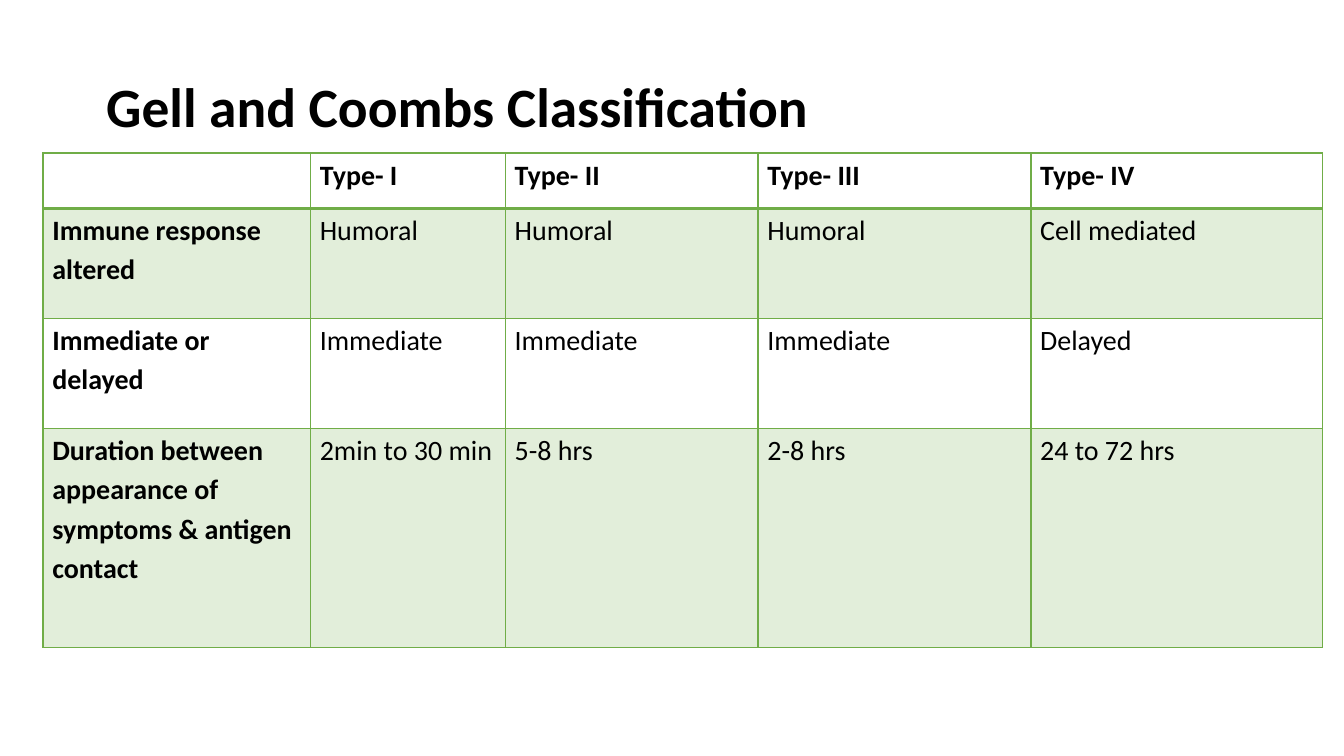
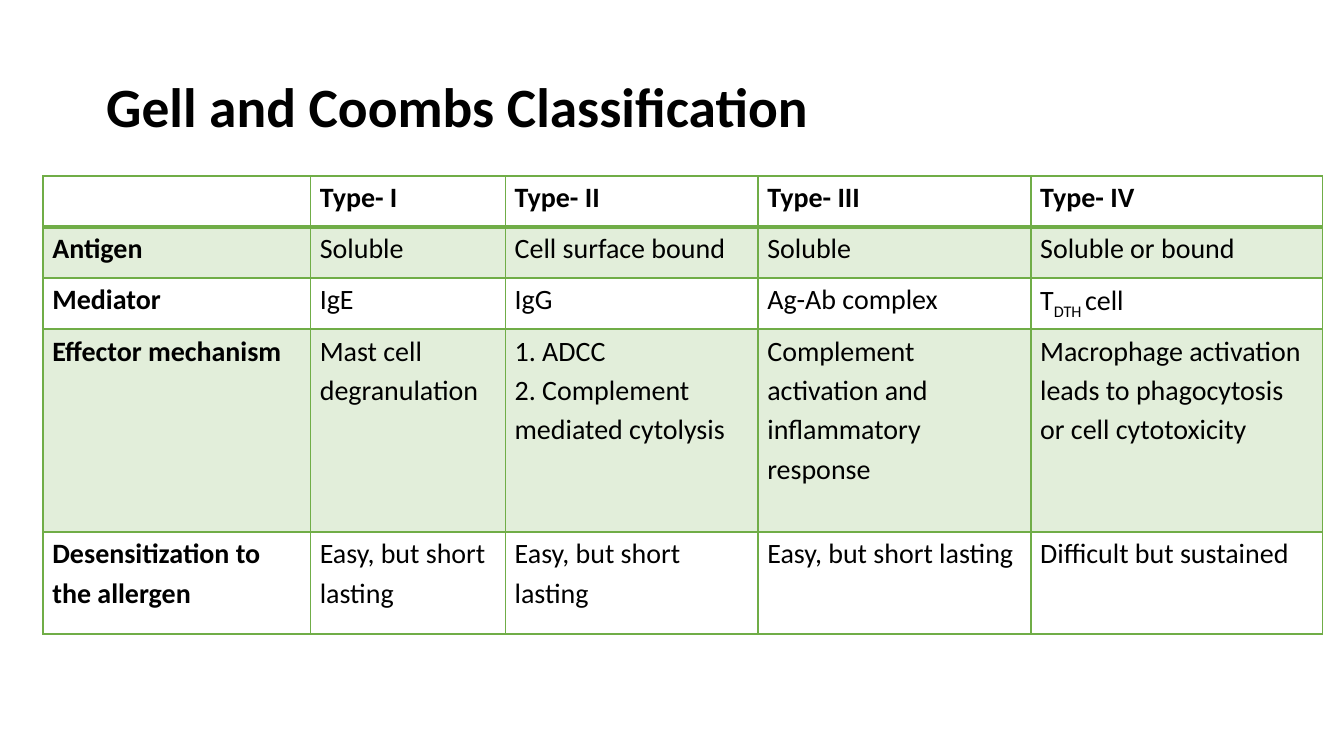
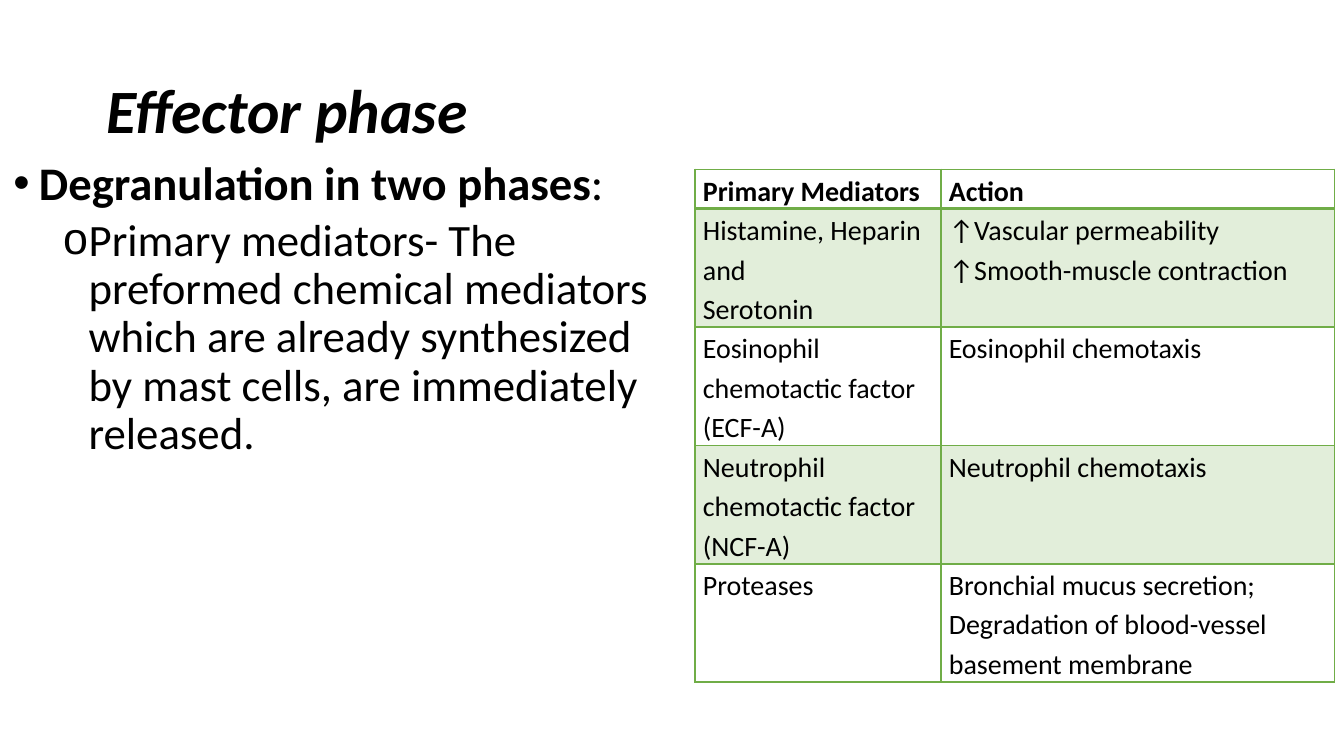
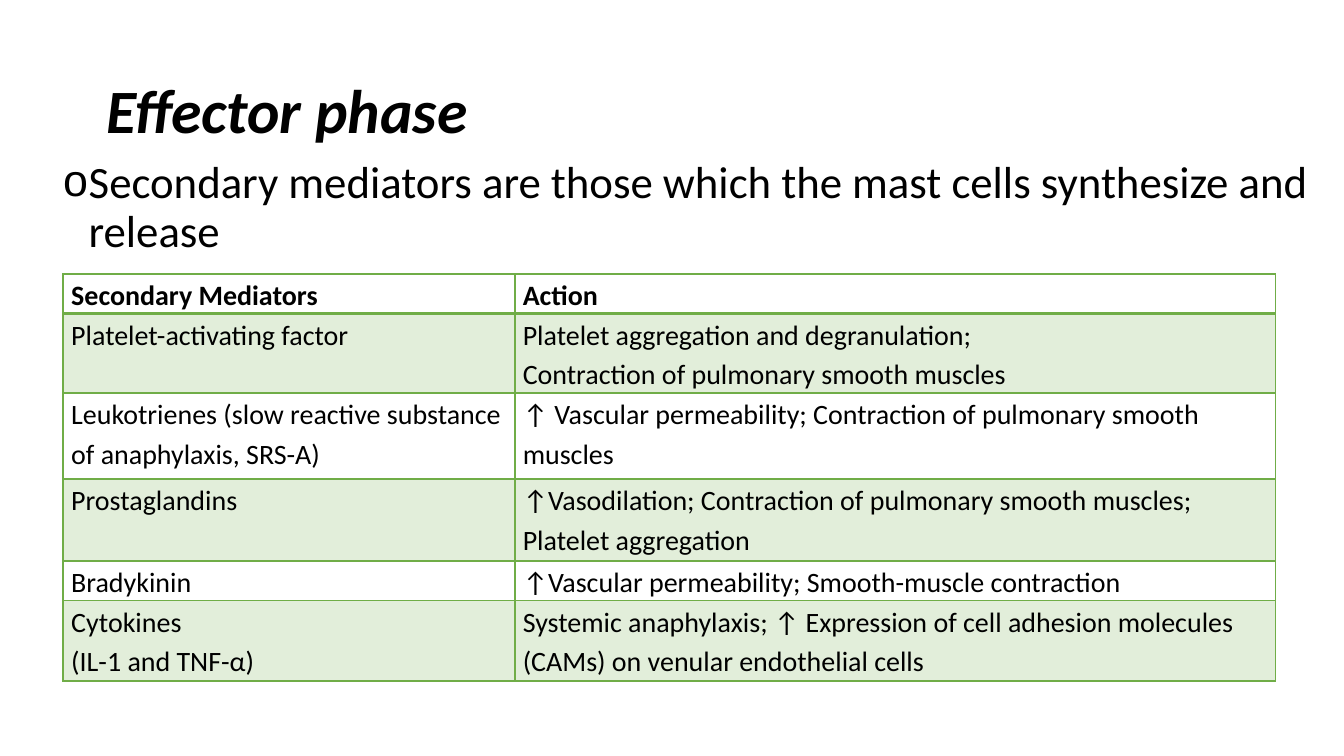
from lxml.etree import SubElement
from pptx import Presentation
from pptx.dml.color import RGBColor
from pptx.enum.text import MSO_ANCHOR, MSO_AUTO_SIZE, PP_ALIGN
from pptx.oxml.ns import qn
from pptx.util import Inches, Pt

BLACK = RGBColor(0x00, 0x00, 0x00)
WHITE = RGBColor(0xFF, 0xFF, 0xFF)
GREEN = RGBColor(0x70, 0xAD, 0x47)
FONT = "Calibri"
BAND_OPACITY = 20

TYPES = ["", "Type- I", "Type- II", "Type- III", "Type- IV"]
TYPE_COLUMNS = [1.99, 1.45, 1.88, 2.03, 2.17]
CLASSIFICATION_TITLE = dict(text="Gell and Coombs Classification", size=29.7, bottom=0.11)
PHASE_TITLE = dict(text="Effector phase", size=33, italic=True, bottom=0.05)

BULLETS = {
    0: dict(character="•", left=0.19, before=7.5),
    1: dict(character="o", left=0.56, before=3.8),
}
HANGING = 0.19

SLIDES = [
    dict(
        title=CLASSIFICATION_TITLE,
        table=dict(
            left=0.32, top=1.14, columns=TYPE_COLUMNS,
            heights=[0.41, 0.82, 0.82, 1.63], margin=0.07, bold_labels=True,
            rows=[
                TYPES,
                ["Immune response altered", "Humoral", "Humoral", "Humoral", "Cell mediated"],
                ["Immediate or delayed", "Immediate", "Immediate", "Immediate", "Delayed"],
                ["Duration between appearance of symptoms & antigen contact",
                 "2min to 30 min", "5-8 hrs", "2-8 hrs", "24 to 72 hrs"],
            ],
        ),
    ),
    dict(
        title=CLASSIFICATION_TITLE,
        table=dict(
            left=0.32, top=1.31, columns=TYPE_COLUMNS,
            heights=[0.38, 0.38, 0.38, 1.51, 0.76], margin=0.07, bold_labels=True,
            rows=[
                TYPES,
                ["Antigen", "Soluble", "Cell surface bound", "Soluble", "Soluble or bound"],
                ["Mediator", "IgE", "IgG", "Ag-Ab complex",
                 [("T", {}), ("DTH ", dict(baseline=-25)), ("cell", {})]],
                ["Effector mechanism", "Mast cell degranulation",
                 "1. ADCC\n2. Complement mediated cytolysis",
                 "Complement activation and inflammatory response",
                 "Macrophage activation leads to phagocytosis or cell cytotoxicity"],
                ["Desensitization to the allergen", "Easy, but short lasting",
                 "Easy, but short lasting", "Easy, but short lasting",
                 "Difficult but sustained"],
            ],
        ),
    ),
    dict(
        title=PHASE_TITLE,
        body_width=5,
        body=[
            (0, [("Degranulation in two phases", dict(size=25, bold=True)),
                 (":", dict(size=25))]),
            (1, [("Primary mediators- The preformed chemical mediators which are already "
                  "synthesized by mast cells, are immediately released.", dict(size=24))]),
        ],
        table=dict(
            left=5.17, top=1.26, columns=[1.83, 2.93],
            heights=[0.29] + [0.88] * 4, margin=0.06, bold_labels=False,
            rows=[
                ["Primary Mediators", "Action"],
                ["Histamine, Heparin and\nSerotonin",
                 "↑Vascular permeability\n↑Smooth-muscle contraction"],
                ["Eosinophil chemotactic factor (ECF-A)", "Eosinophil chemotaxis"],
                ["Neutrophil chemotactic factor (NCF-A)", "Neutrophil chemotaxis"],
                ["Proteases", "Bronchial mucus secretion; Degradation of blood-vessel "
                              "basement membrane"],
            ],
        ),
    ),
    dict(
        title=PHASE_TITLE,
        body_width=9.84,
        body=[
            (1, [("Secondary mediators are those which the mast cells synthesize and release",
                  dict(size=24))]),
        ],
        table=dict(
            left=0.47, top=2.04, columns=[3.36, 5.66],
            heights=[0.29, 0.59, 0.64, 0.61, 0.29, 0.6], margin=0.06, bold_labels=False,
            rows=[
                ["Secondary Mediators", "Action"],
                ["Platelet-activating factor",
                 "Platelet aggregation and degranulation;\n"
                 "Contraction of pulmonary smooth muscles"],
                ["Leukotrienes (slow reactive substance of anaphylaxis, SRS-A)",
                 "↑ Vascular permeability; Contraction of pulmonary smooth muscles"],
                ["Prostaglandins",
                 "↑Vasodilation; Contraction of pulmonary smooth muscles; Platelet aggregation"],
                ["Bradykinin", "↑Vascular permeability; Smooth-muscle contraction"],
                ["Cytokines\n(IL-1 and TNF-α)",
                 "Systemic anaphylaxis; ↑ Expression of cell adhesion molecules (CAMs) "
                 "on venular endothelial cells"],
            ],
        ),
    ),
]


def add_text(paragraph, text, size=15, bold=False, italic=False, baseline=0):
    run = paragraph.add_run()
    run.text = text
    font = run.font
    font.name, font.size, font.bold, font.italic = FONT, Pt(size), bold, italic
    font.color.rgb = BLACK
    if baseline:
        run._r.get_or_add_rPr().set("baseline", str(baseline * 1000))


def next_paragraph(frame, index, spacing):
    paragraph = frame.add_paragraph() if index else frame.paragraphs[0]
    paragraph.alignment = PP_ALIGN.LEFT
    paragraph.line_spacing = spacing
    paragraph.space_before = Pt(0)
    return paragraph


def place(shape, left, top, width, height):
    shape.left, shape.top = Inches(left), Inches(top)
    shape.width, shape.height = Inches(width), Inches(height)


def fill_title(shape, text, bottom, **style):
    place(shape, 0.69, 0.3, 8.62, 1.09)
    frame = shape.text_frame
    frame.auto_size = MSO_AUTO_SIZE.NONE
    frame.vertical_anchor = MSO_ANCHOR.MIDDLE
    frame.margin_bottom = Inches(bottom)
    add_text(next_paragraph(frame, 0, 0.9), text, bold=True, **style)


def fill_body(shape, items, width):
    place(shape, 0, 1.14, width, 4.37)
    frame = shape.text_frame
    frame.auto_size = MSO_AUTO_SIZE.NONE
    for index, (level, runs) in enumerate(items):
        bullet = BULLETS[level]
        paragraph = next_paragraph(frame, index, 0.9)
        paragraph.level = level
        if index:
            paragraph.space_before = Pt(bullet["before"])
        properties = paragraph._p.get_or_add_pPr()
        properties.set("marL", str(Inches(bullet["left"])))
        properties.set("indent", str(-Inches(HANGING)))
        SubElement(properties, qn("a:buChar"), char=bullet["character"])
        for text, style in runs:
            add_text(paragraph, text, **style)


def draw_borders(cell, row):
    widths = dict(L=1, R=1, T=2 if row == 1 else 1, B=2 if row == 0 else 1)
    for side, width in widths.items():
        line = SubElement(cell._tc.get_or_add_tcPr(), qn(f"a:ln{side}"), w=str(Pt(width)))
        SubElement(SubElement(line, qn("a:solidFill")), qn("a:srgbClr"), val=str(GREEN))


def fill_cell(cell, content, row, margin, bold):
    cell.margin_left = cell.margin_right = Inches(margin)
    cell.margin_top = cell.margin_bottom = 0
    draw_borders(cell, row)
    if row % 2:
        cell.fill.solid()
        cell.fill.fore_color.rgb = GREEN
        colour = cell._tc.tcPr.find(qn("a:solidFill")).find(qn("a:srgbClr"))
        SubElement(colour, qn("a:alpha"), val=str(BAND_OPACITY * 1000))
    else:
        cell.fill.background()
    if not content:
        return
    if isinstance(content, str):
        paragraphs = [[(line, {})] for line in content.split("\n")]
    else:
        paragraphs = [content]
    for index, runs in enumerate(paragraphs):
        paragraph = next_paragraph(cell.text_frame, index, 1.15)
        for text, style in runs:
            add_text(paragraph, text, bold=bold, **style)


def add_table(slide, left, top, columns, heights, margin, bold_labels, rows):
    frame = slide.shapes.add_table(
        len(rows), len(columns), Inches(left), Inches(top),
        Inches(sum(columns)), Inches(sum(heights)))
    table = frame.table
    table.first_row = table.horz_banding = False
    for column, width in zip(table.columns, columns):
        column.width = Inches(width)
    for row, (contents, height) in enumerate(zip(rows, heights)):
        table.rows[row].height = Inches(height)
        for column, content in enumerate(contents):
            bold = row == 0 or (bold_labels and column == 0)
            fill_cell(table.cell(row, column), content, row, margin, bold)


def main():
    presentation = Presentation()
    presentation.slide_width = Inches(10)
    presentation.slide_height = Inches(10 * 9 / 16)
    background = presentation.slide_master.background.fill
    background.solid()
    background.fore_color.rgb = WHITE
    for content in SLIDES:
        layout = presentation.slide_layouts[1 if "body" in content else 5]
        slide = presentation.slides.add_slide(layout)
        fill_title(slide.shapes.title, **content["title"])
        if "body" in content:
            fill_body(slide.placeholders[1], content["body"], content["body_width"])
        add_table(slide, **content["table"])
    presentation.save("out.pptx")


if __name__ == "__main__":
    main()
